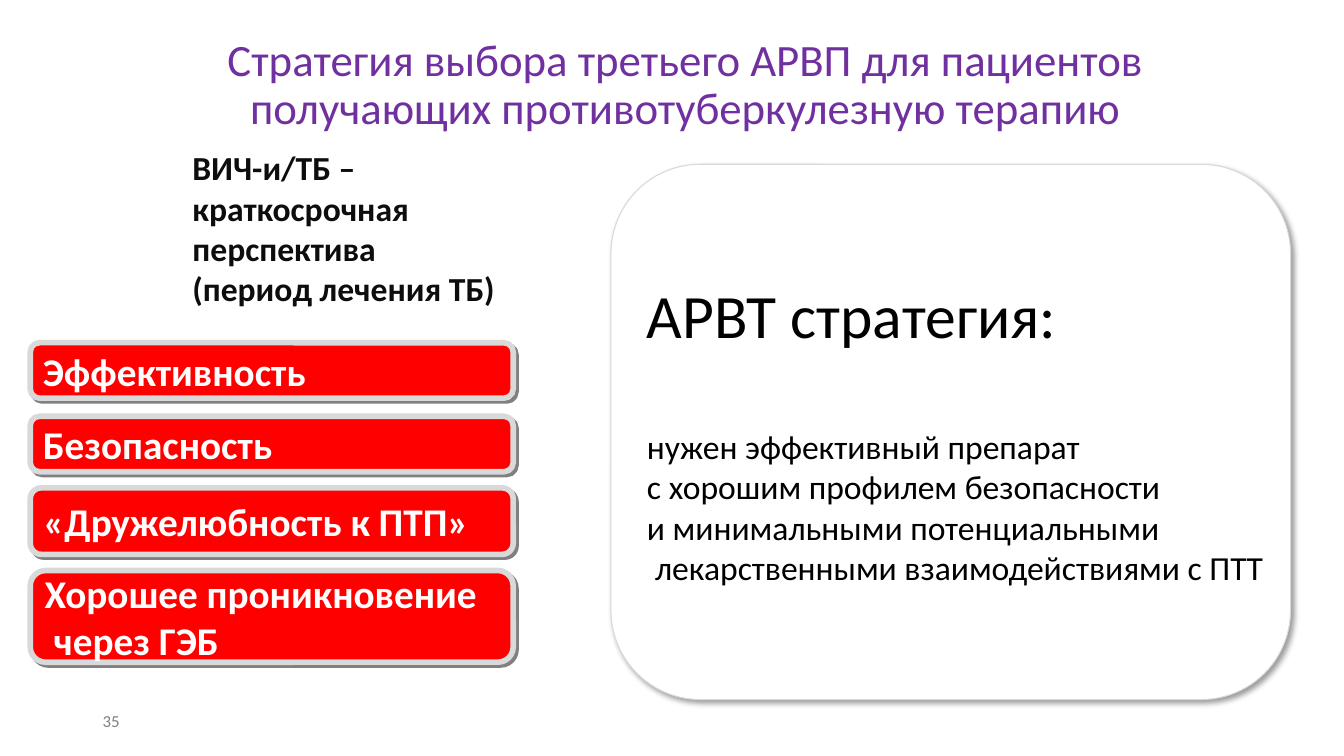
from lxml import etree
from pptx import Presentation
from pptx.dml.color import RGBColor
from pptx.enum.shapes import MSO_SHAPE
from pptx.enum.text import MSO_ANCHOR, PP_ALIGN
from pptx.oxml.ns import qn
from pptx.util import Inches, Pt

ROUNDED = MSO_SHAPE.ROUNDED_RECTANGLE
TOP, MIDDLE = MSO_ANCHOR.TOP, MSO_ANCHOR.MIDDLE
LEFT, CENTER = PP_ALIGN.LEFT, PP_ALIGN.CENTER

FONT = "Calibri"
COLORS = {
    "title": "7030A0", "number": "808080", "heading": "0D0D0D",
    "criterion": "FF0000", "border": "D9D9D9", "white": "FFFFFF",
    "black": "000000", "criterion_shadow": "808080",
}

TITLE = ("Стратегия выбора третьего АРВП для пациентов "
         "получающих противотуберкулезную терапию")
PAGE_NUMBER = "35"
HEADING = ["ВИЧ-и/ТБ –краткосрочная перспектива", "(период лечения ТБ)"]
# Lines, top and height in inches
CRITERIA = [
    (["Эффективность"], 3.4, 0.55),
    (["Безопасность"], 4.13, 0.55),
    (["«Дружелюбность к ПТП»"], 4.84, 0.66),
    (["Хорошее проникновение", "через ГЭБ"], 5.66, 0.91),
]
STRATEGY = [
    "АРВТ стратегия:",
    "нужен эффективный препарат",
    "с хорошим профилем безопасности",
    "и минимальными потенциальными",
    "лекарственными взаимодействиями с ПТТ",
]
CRITERIA_LEFT, CRITERIA_WIDTH = 0.3, 4.79
# Colour, opacity %, blur pt, distance pt
CRITERION_SHADOW = ("criterion_shadow", 100, 0, 2.8)
STRATEGY_SHADOW = ("black", 40, 4, 3)


def rgb(name):
    return RGBColor.from_string(COLORS[name])


def write(box, lines, size, color, bold=False, anchor=MIDDLE, align=LEFT, wrap=True):
    frame = box.text_frame
    frame.text = "\n".join(lines)
    frame.word_wrap = wrap
    frame.vertical_anchor = anchor
    for para in frame.paragraphs:
        para.alignment = align
        for span in para.runs:
            span.font.name = FONT
            span.font.size = Pt(size)
            span.font.bold = bold
            span.font.color.rgb = rgb(color)
    return frame.paragraphs


def add_text(page, area, lines, size, color, **style):
    box = page.shapes.add_textbox(*map(Inches, area))
    return write(box, lines, size, color, **style)


def add_panel(page, area, fill, line_width, shadow):
    panel = page.shapes.add_shape(ROUNDED, *map(Inches, area))
    panel.fill.solid()
    panel.fill.fore_color.rgb = rgb(fill)
    panel.line.color.rgb = rgb("border")
    panel.line.width = Pt(line_width)
    panel.shadow.inherit = False
    color, opacity, blur, distance = shadow
    effects = panel.element.spPr.find(qn("a:effectLst"))
    outer = etree.SubElement(effects, qn("a:outerShdw"), blurRad=str(Pt(blur)),
                             dist=str(Pt(distance)), dir=str(45 * 60000),
                             algn="tl", rotWithShape="0")
    tint = etree.SubElement(outer, qn("a:srgbClr"), val=COLORS[color])
    etree.SubElement(tint, qn("a:alpha"), val=str(opacity * 1000))
    return panel


def indent(para, inches):
    properties = para._p.get_or_add_pPr()
    properties.set("marL", str(Inches(inches)))
    properties.set("indent", "0")


def main():
    deck = Presentation()
    deck.slide_width, deck.slide_height = Inches(13.33), Inches(7.5)
    page = deck.slides.add_slide(deck.slide_layouts[6])

    title = add_text(page, (1.05, 0.13, 11.5, 1.45), [TITLE], 32, "title", align=CENTER)
    title[0].line_spacing = 0.9
    add_text(page, (0.92, 6.95, 3, 0.4), [PAGE_NUMBER], 12, "number")
    add_text(page, (1.81, 1.41, 3.49, 1.72), HEADING, 24, "heading",
             bold=True, anchor=TOP)

    for lines, top, height in CRITERIA:
        panel = add_panel(page, (CRITERIA_LEFT, top, CRITERIA_WIDTH, height),
                          "criterion", 4, CRITERION_SHADOW)
        paras = write(panel, lines, 28, "white", bold=True, wrap=False)
        for para in paras[1:]:
            indent(para, 0.09)

    panel = add_panel(page, (6.06, 1.63, 6.74, 5.31), "white", 0.75, STRATEGY_SHADOW)
    paras = write(panel, STRATEGY, 24, "black", wrap=False)
    paras[0].runs[0].font.size = Pt(44)
    paras[1].space_before = Pt(54)
    indent(paras[-1], 0.08)

    deck.save("out.pptx")


if __name__ == "__main__":
    main()
